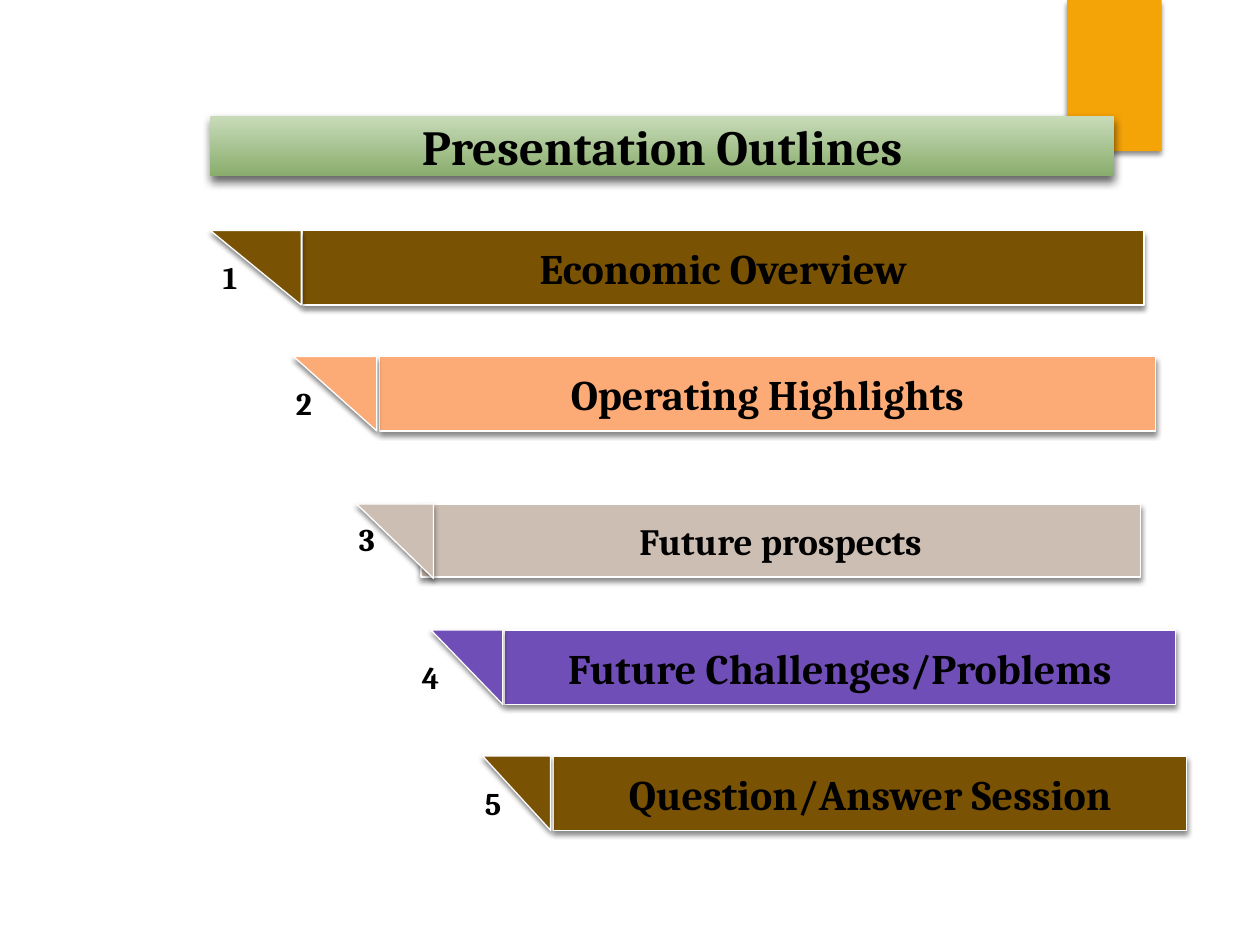
from dataclasses import dataclass

from lxml import etree
from pptx import Presentation
from pptx.dml.color import RGBColor
from pptx.enum.shapes import MSO_SHAPE
from pptx.enum.text import MSO_ANCHOR, MSO_AUTO_SIZE, PP_ALIGN
from pptx.oxml.ns import qn
from pptx.util import Inches, Pt

RECT = MSO_SHAPE.RECTANGLE
WEDGE = MSO_SHAPE.RIGHT_TRIANGLE
MIDDLE = MSO_ANCHOR.MIDDLE
CENTER = PP_ALIGN.CENTER
LEFT = PP_ALIGN.LEFT
FIXED = MSO_AUTO_SIZE.NONE
GROW = MSO_AUTO_SIZE.SHAPE_TO_FIT_TEXT


@dataclass(frozen=True)
class Theme:
    font: str = "Cambria"
    ink: str = "000000"
    edge: str = "FFFFFF"
    amber: str = "F5A408"
    brown: str = "7A5204"
    peach: str = "FCAB76"
    sand: str = "CDBEB3"
    violet: str = "6F4EB7"
    pale: str = "C8DBB9"
    green: str = "89AD6C"
    head: float = 28
    body: float = 24
    small: float = 21.2
    label: float = 18


class Deck:
    def __init__(self, theme):
        self.theme = theme
        self.file = Presentation()
        self.file.slide_width = Inches(10)
        self.file.slide_height = Inches(7.5)
        self.slide = self.file.slides.add_slide(self.file.slide_layouts[5])

    def place(self, shape, box):
        shape.left, shape.top, shape.width, shape.height = map(Inches, box)

    def shade(self, shape, alpha=45, blur=3, dist=2):
        shape.shadow.inherit = False
        effect = shape._element.spPr.find(qn("a:effectLst"))
        shadow = etree.SubElement(
            effect, qn("a:outerShdw"), blurRad=str(Pt(blur)),
            dist=str(Pt(dist)), dir="5400000", rotWithShape="0")
        color = etree.SubElement(shadow, qn("a:srgbClr"), val=self.theme.ink)
        etree.SubElement(color, qn("a:alpha"), val=str(alpha * 1000))

    def label(self, shape, text, size, align=CENTER, fit=FIXED):
        frame = shape.text_frame
        frame.text = text
        frame.word_wrap = True
        frame.auto_size = fit
        line = frame.paragraphs[0]
        line.alignment = align
        line.font.name = self.theme.font
        line.font.size = Pt(size)
        line.font.bold = True
        line.font.color.rgb = RGBColor.from_string(self.theme.ink)

    def title(self, text, box):
        shape = self.slide.shapes.title
        self.place(shape, box)
        shape.fill.gradient()
        shape.fill.gradient_angle = 270
        tones = self.theme.pale, self.theme.green
        for stop, tone, spot in zip(shape.fill.gradient_stops, tones, (0, 1)):
            stop.color.rgb = RGBColor.from_string(tone)
            stop.position = spot
        self.shade(shape, 60, 5, 3)
        self.label(shape, text, self.theme.head)
        shape.text_frame.vertical_anchor = MIDDLE

    def block(self, kind, box, color, home=None, edge=True):
        home = home or self.slide.shapes
        shape = home.add_shape(kind, *map(Inches, box))
        shape.fill.solid()
        shape.fill.fore_color.rgb = RGBColor.from_string(color)
        if edge:
            shape.line.color.rgb = RGBColor.from_string(self.theme.edge)
            shape.line.width = Pt(0.75)
        else:
            shape.line.fill.background()
        self.shade(shape)
        return shape

    def accent(self, box):
        shape = self.block(RECT, box, self.theme.amber, edge=False)
        self.slide.shapes.title._element.addprevious(shape._element)

    def banner(self, text, color, size, top, bar, wedge, tall=0.59):
        group = self.slide.shapes.add_group_shape().shapes
        shape = self.block(RECT, (bar[0], top, bar[1], tall), color, group)
        shape.text_frame.vertical_anchor = MIDDLE
        self.label(shape, text, size)
        tip = self.block(WEDGE, (wedge[0], top, wedge[1], 0.59), color, group)
        tip.rotation = 180

    def number(self, text, left, top):
        box = map(Inches, (left, top, 0.33, 0.4))
        shape = self.slide.shapes.add_textbox(*box)
        self.label(shape, text, self.theme.label, LEFT, GROW)


def main():
    theme = Theme()
    deck = Deck(theme)
    deck.accent((8.47, 0, 0.75, 1.2))
    deck.title("Presentation Outlines", (1.67, 0.92, 7.17, 0.48))

    body, small = theme.body, theme.small
    banners = [
        ("Economic Overview", theme.brown, body, 1.83, (2.4, 6.68), (1.67, 0.72)),
        ("Operating Highlights", theme.peach, body, 2.83, (3.01, 6.16), (2.33, 0.66)),
        ("Future prospects", theme.sand, small, 4, (3.34, 5.71), (2.83, 0.61), 0.58),
        ("Future Challenges/Problems", theme.violet, body, 5, (4, 5.33), (3.42, 0.57)),
        ("Question/Answer Session", theme.brown, body, 6, (4.39, 5.03), (3.83, 0.54)),
    ]
    for banner in banners:
        deck.banner(*banner)

    spots = [(1.67, 2), (2.25, 3), (2.75, 4.08), (3.25, 5.17), (3.75, 6.17)]
    for index, spot in enumerate(spots, 1):
        deck.number(str(index), *spot)

    deck.file.save("out.pptx")


if __name__ == "__main__":
    main()
